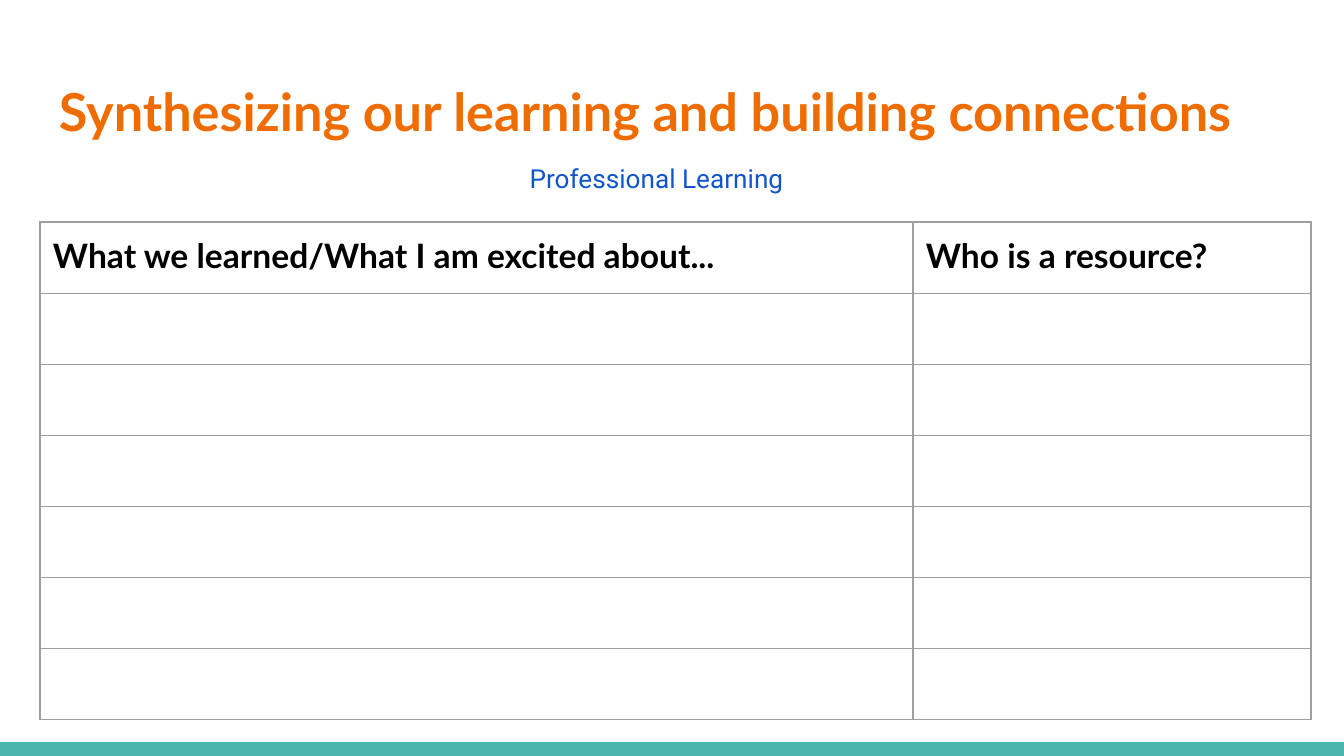
from dataclasses import dataclass

from lxml import etree
from pptx import Presentation
from pptx.dml.color import RGBColor
from pptx.enum.shapes import MSO_SHAPE
from pptx.enum.text import MSO_ANCHOR, MSO_AUTO_SIZE, PP_ALIGN
from pptx.oxml.ns import qn
from pptx.util import Emu, Pt

RECTANGLE = MSO_SHAPE.RECTANGLE
TOP = MSO_ANCHOR.TOP
NO_AUTOFIT = MSO_AUTO_SIZE.NONE
LEFT, CENTER = PP_ALIGN.LEFT, PP_ALIGN.CENTER
TITLE_ONLY = 5


@dataclass(frozen=True)
class Theme:
    background: str = "FFFFFF"
    footer: str = "4DB6AC"
    title: str = "EF6C00"
    subtitle: str = "1155CC"
    heading: str = "000000"
    grid: str = "9E9E9E"
    grid_width: float = 0.75
    title_size: int = 28
    subtitle_size: int = 14
    heading_size: int = 18
    main_font: str = "Lato"
    subtitle_font: str = "Roboto"


theme = Theme()


def px(length):
    return Emu(round(length * 9144000 / 1344))


def write(frame, text, *, size, color, font=theme.main_font, bold=False, align=LEFT):
    frame.word_wrap = True
    paragraph = frame.paragraphs[0]
    paragraph.alignment = align
    paragraph.line_spacing = 1.0
    run = paragraph.add_run()
    run.text = text
    run.font.name = font
    run.font.size = Pt(size)
    run.font.bold = bold
    run.font.color.rgb = RGBColor.from_string(color)


prs = Presentation()
prs.slide_width, prs.slide_height = px(1344), px(756)
slide = prs.slides.add_slide(prs.slide_layouts[TITLE_ONLY])
slide.background.fill.solid()
slide.background.fill.fore_color.rgb = RGBColor.from_string(theme.background)

footer = slide.shapes.add_shape(RECTANGLE, px(0), px(742), px(1344), px(14))
footer.shadow.inherit = False
footer.fill.solid()
footer.fill.fore_color.rgb = RGBColor.from_string(theme.footer)
footer.line.fill.background()

title = slide.shapes.title
title.left, title.top, title.width, title.height = px(46), px(66), px(1252), px(104)
heading = title.text_frame
heading.auto_size = NO_AUTOFIT
heading.vertical_anchor = TOP
heading.margin_left = heading.margin_right = px(13)
heading.margin_top = heading.margin_bottom = px(13)
write(heading, "Synthesizing our learning and building connections",
      size=theme.title_size, color=theme.title, bold=True)

column_widths = [873, 398]
column_titles = ["What we learned/What I am excited about...", "Who is a resource?"]
row_count = 7
table_height = 498
learning_frame = slide.shapes.add_table(
    row_count, len(column_widths), px(40), px(222), px(sum(column_widths)), px(table_height))
learning = learning_frame.table
learning.first_row = learning.horz_banding = False
for column, width in zip(learning.columns, column_widths):
    column.width = px(width)
for row in learning.rows:
    row.height = px(table_height / row_count)

for cell in learning.iter_cells():
    cell.margin_left = cell.margin_right = px(13)
    cell.margin_top = cell.margin_bottom = px(13)
    properties = cell._tc.get_or_add_tcPr()
    for side in ("a:lnL", "a:lnR", "a:lnT", "a:lnB"):
        border = etree.SubElement(properties, qn(side), w=str(Pt(theme.grid_width)))
        border_fill = etree.SubElement(border, qn("a:solidFill"))
        etree.SubElement(border_fill, qn("a:srgbClr"), val=theme.grid)
    cell.fill.background()

for column_index, column_title in enumerate(column_titles):
    write(learning.cell(0, column_index).text_frame, column_title,
          size=theme.heading_size, color=theme.heading, bold=True)

subtitle = slide.shapes.add_textbox(px(231), px(156), px(851), px(66))
write(subtitle.text_frame, "Professional Learning", size=theme.subtitle_size,
      color=theme.subtitle, font=theme.subtitle_font, align=CENTER)

prs.save("out.pptx")
